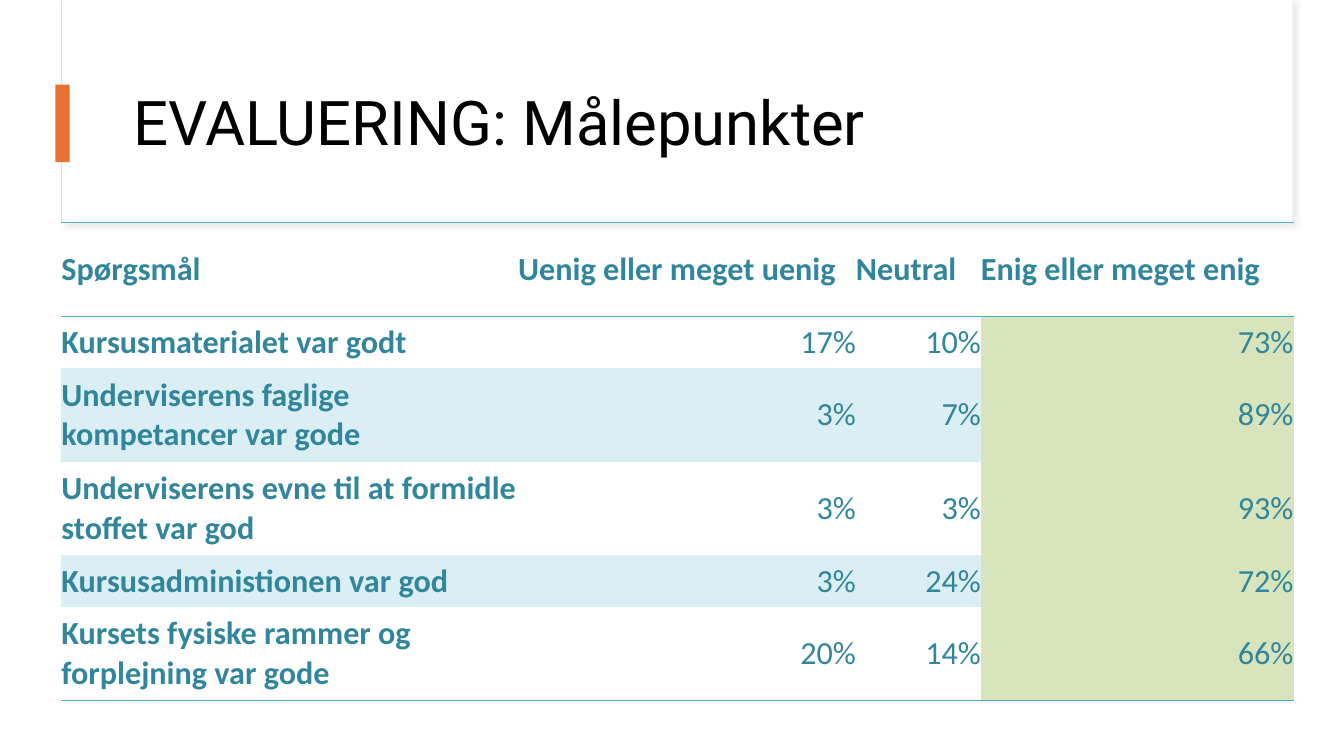
from lxml.etree import SubElement
from pptx import Presentation
from pptx.dml.color import RGBColor
from pptx.enum.shapes import MSO_SHAPE
from pptx.enum.text import MSO_ANCHOR, PP_ALIGN
from pptx.oxml import parse_xml
from pptx.oxml.ns import nsdecls, qn
from pptx.util import Inches, Pt

BLACK = RGBColor(0x00, 0x00, 0x00)
WHITE = RGBColor(0xFF, 0xFF, 0xFF)
FRAME_GRAY = RGBColor(0xE1, 0xE1, 0xE1)
SHADOW_GRAY = RGBColor(0xD9, 0xD9, 0xD9)
ORANGE = RGBColor(0xE9, 0x71, 0x32)
TEAL = RGBColor(0x31, 0x86, 0x9B)
RULE_BLUE = RGBColor(0x4B, 0xAC, 0xC6)
BAND_BLUE = RGBColor(0xDA, 0xEE, 0xF3)
GREEN = RGBColor(0xD8, 0xE4, 0xBC)

ROWS = [
    ("Spørgsmål", "Uenig eller meget uenig", "Neutral", "Enig eller meget enig"),
    ("Kursusmaterialet var godt", "17%", "10%", "73%"),
    ("Underviserens faglige kompetancer var gode", "3%", "7%", "89%"),
    ("Underviserens evne til at formidle stoffet var god", "3%", "3%", "93%"),
    ("Kursusadministionen var god", "3%", "24%", "72%"),
    ("Kursets fysiske rammer og forplejning var gode", "20%", "14%", "66%"),
]
COLUMN_WIDTHS = [4.53, 3.35, 1.24, 3.1]
ROW_HEIGHTS = [0.93, 0.51, 0.93, 0.93, 0.51, 0.93]


def add_rectangle(left, top, width, height, color):
    shape = slide.shapes.add_shape(
        MSO_SHAPE.RECTANGLE, Inches(left), Inches(top), Inches(width), Inches(height))
    shape.shadow.inherit = False
    shape.fill.solid()
    shape.fill.fore_color.rgb = color
    shape.line.fill.background()
    return shape


def set_border(cell, side, visible):
    properties = cell._tc.get_or_add_tcPr()
    border = SubElement(properties, qn(f"a:{side}"), w=str(Pt(0.5)))
    if visible:
        fill = SubElement(border, qn("a:solidFill"))
        SubElement(fill, qn("a:srgbClr"), val=str(RULE_BLUE))
    else:
        SubElement(border, qn("a:noFill"))


presentation = Presentation()
presentation.slide_width = Inches(13.33)
presentation.slide_height = Inches(7.5)
slide = presentation.slides.add_slide(presentation.slide_layouts[5])

title = slide.shapes.title
title.left, title.top = Inches(1.22), Inches(0.6)
title.width, title.height = Inches(11.12), Inches(1.29)
title.text_frame.text = "EVALUERING: Målepunkter"
title.text_frame.vertical_anchor = MSO_ANCHOR.MIDDLE
paragraph = title.text_frame.paragraphs[0]
paragraph.alignment = PP_ALIGN.LEFT
paragraph.line_spacing = 0.9
font = paragraph.runs[0].font
font.name = "Roboto"
font.size = Pt(44)
font.color.rgb = BLACK

frame = add_rectangle(0.61, 0, 12.21, 2.21, WHITE)
frame.line.color.rgb = FRAME_GRAY
frame.line.width = Pt(1)
effects = frame.element.spPr.find(qn("a:effectLst"))
effects.append(parse_xml(
    f'<a:outerShdw {nsdecls("a")} blurRad="{Pt(4)}" dist="{Pt(3)}" dir="2700000" '
    f'algn="tl" rotWithShape="0"><a:srgbClr val="{SHADOW_GRAY}">'
    '<a:alpha val="50000"/></a:srgbClr></a:outerShdw>'))
panel = add_rectangle(0.62, 0, 12.2, 2.2, WHITE)
for background in (frame, panel):
    title.element.addprevious(background.element)
add_rectangle(0.55, 0.84, 0.14, 0.77, ORANGE)

table = slide.shapes.add_table(
    len(ROWS), len(COLUMN_WIDTHS), Inches(0.61), Inches(2.21),
    Inches(sum(COLUMN_WIDTHS)), Inches(sum(ROW_HEIGHTS))).table
table.first_row = False
table.horz_banding = False
for column, width in zip(table.columns, COLUMN_WIDTHS):
    column.width = Inches(width)
for row, height in zip(table.rows, ROW_HEIGHTS):
    row.height = Inches(height)

last_row = len(ROWS) - 1
last_column = len(COLUMN_WIDTHS) - 1
for row_index, texts in enumerate(ROWS):
    for column_index, text in enumerate(texts):
        cell = table.cell(row_index, column_index)
        cell.margin_left = cell.margin_right = cell.margin_top = cell.margin_bottom = 0
        cell.vertical_anchor = MSO_ANCHOR.MIDDLE
        set_border(cell, "lnL", False)
        set_border(cell, "lnR", False)
        set_border(cell, "lnT", row_index in (0, 1))
        set_border(cell, "lnB", row_index in (0, last_row))
        if row_index > 0 and column_index == last_column:
            cell.fill.solid()
            cell.fill.fore_color.rgb = GREEN
        elif row_index in (2, 4):
            cell.fill.solid()
            cell.fill.fore_color.rgb = BAND_BLUE
        else:
            cell.fill.background()
        cell.text_frame.text = text
        paragraph = cell.text_frame.paragraphs[0]
        is_label = row_index == 0 or column_index == 0
        paragraph.alignment = PP_ALIGN.LEFT if is_label else PP_ALIGN.RIGHT
        font = paragraph.runs[0].font
        font.name = "Calibri"
        font.size = Pt(23)
        font.bold = is_label
        font.color.rgb = TEAL

presentation.save("out.pptx")
